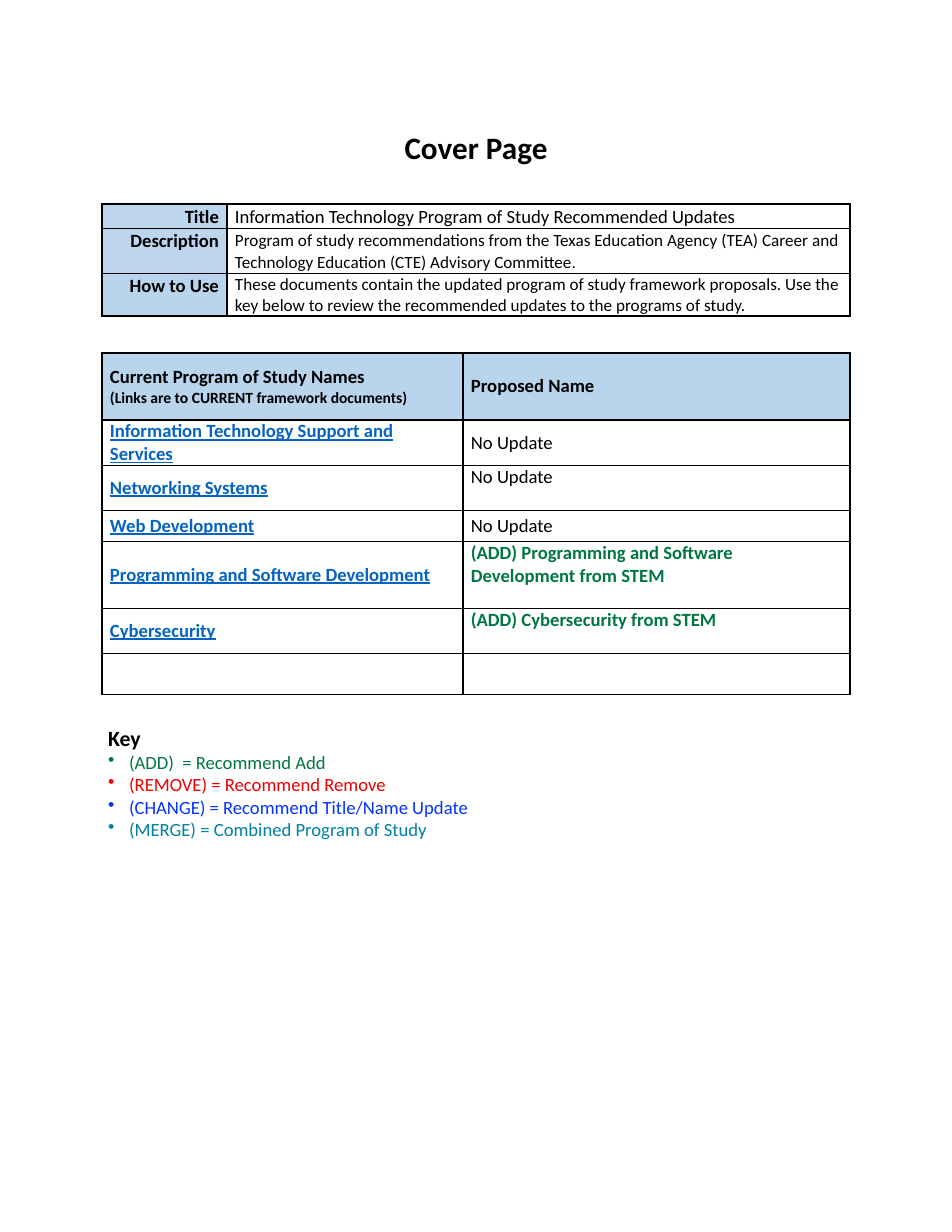
from lxml import etree
from pptx import Presentation
from pptx import util as u
from pptx.dml.color import RGBColor
from pptx.enum import text
from pptx.oxml import ns

PX = u.Inches(1) / 112
FONT = "Calibri"
COLORS = {
    "black": "000000", "white": "FFFFFF", "label": "BDD6EE", "header": "B9D4ED",
    "link": "0563C1", "add": "007742", "remove": "ED0000", "change": "0432FF",
    "merge": "0080A3",
}
TOP, MIDDLE = text.MSO_ANCHOR.TOP, text.MSO_ANCHOR.MIDDLE
RIGHT = text.PP_ALIGN.RIGHT

DETAILS = [
    ("Title", "Information Technology Program of Study Recommended Updates",
     12, 1.07, "label", 24),
    ("Description", "Program of study recommendations from the Texas Education Agency "
     "(TEA) Career and Technology Education (CTE) Advisory Committee.",
     11, 1.07, "label", 44),
    ("How to Use", "These documents contain the updated program of study framework "
     "proposals. Use the key below to review the recommended updates to the "
     "programs of study.", 11, 1, "header", 42),
]
PROGRAMS = [
    ("Information Technology Support and Services", "No Update", MIDDLE, 45),
    ("Networking Systems", "No Update", TOP, 45),
    ("Web Development", "No Update", MIDDLE, 31),
    ("Programming and Software Development",
     "(ADD) Programming and Software Development from STEM", TOP, 67),
    ("Cybersecurity", "(ADD) Cybersecurity from STEM", TOP, 45),
    ("", "", MIDDLE, 41),
]
KEY = [
    ("(ADD)  = Recommend Add", "add"),
    ("(REMOVE) = Recommend Remove", "remove"),
    ("(CHANGE) = Recommend Title/Name Update", "change"),
    ("(MERGE) = Combined Program of Study", "merge"),
]


def px(n):
    return u.Emu(round(n * PX))


def rgb(name):
    return RGBColor.from_string(COLORS[name])


def write(p, words, size=12, bold=False, color="black", underline=False):
    p.text = words
    f = p.font
    f.name, f.size, f.bold, f.underline = FONT, u.Pt(size), bold, underline
    f.color.rgb = rgb(color)


def add_border(cell):
    tc_pr = cell._tc.get_or_add_tcPr()
    for side in ("a:lnL", "a:lnR", "a:lnT", "a:lnB"):
        ln = etree.SubElement(tc_pr, ns.qn(side), w=str(u.Pt(1)))
        fill = etree.SubElement(ln, ns.qn("a:solidFill"))
        etree.SubElement(fill, ns.qn("a:srgbClr"), val=COLORS["black"])


def format_cell(cell, fill="white", anchor=TOP):
    add_border(cell)
    cell.fill.solid()
    cell.fill.fore_color.rgb = rgb(fill)
    cell.vertical_anchor = anchor
    cell.margin_left = cell.margin_right = px(8)
    cell.margin_top = cell.margin_bottom = 0
    return cell.text_frame.paragraphs[0]


def add_table(s, top, widths, heights, header=False):
    frame = s.shapes.add_table(len(heights), len(widths), px(102), px(top),
                               px(sum(widths)), px(sum(heights)))
    table = frame.table
    table.first_row, table.horz_banding = header, False
    for column, width in zip(table.columns, widths):
        column.width = px(width)
    for row, height in zip(table.rows, heights):
        row.height = px(height)
    return table


def add_title(s):
    sp = s.shapes.title
    sp.left, sp.top, sp.width, sp.height = px(0), px(119), px(952), px(56)
    tf = sp.text_frame
    tf.vertical_anchor = MIDDLE
    p = tf.paragraphs[0]
    write(p, "Cover Page", 20, True)
    p.alignment = text.PP_ALIGN.CENTER


def add_details(s):
    table = add_table(s, 204, [125, 623], [row[-1] for row in DETAILS])
    for i, (label, words, size, spacing, fill, _) in enumerate(DETAILS):
        p = format_cell(table.cell(i, 0), fill)
        write(p, label, bold=True)
        p.alignment, p.line_spacing = RIGHT, 1.07
        p = format_cell(table.cell(i, 1))
        write(p, words, size)
        p.line_spacing = spacing


def add_programs(s):
    heights = [67] + [row[-1] for row in PROGRAMS]
    table = add_table(s, 353, [361, 387], heights, header=True)
    current, proposed = table.cell(0, 0), table.cell(0, 1)
    write(format_cell(current, "header", MIDDLE),
          "Current Program of Study Names", bold=True)
    write(current.text_frame.add_paragraph(),
          "(Links are to CURRENT framework documents)", 10, True)
    write(format_cell(proposed, "header", MIDDLE), "Proposed Name", bold=True)
    for i, (name, update, anchor, _) in enumerate(PROGRAMS, 1):
        write(format_cell(table.cell(i, 0), anchor=MIDDLE), name,
              bold=True, color="link", underline=True)
        added = update.startswith("(ADD)")
        write(format_cell(table.cell(i, 1), anchor=anchor), update,
              bold=added, color="add" if added else "black")


def add_bullet(p):
    p_pr = p._p.get_or_add_pPr()
    p_pr.set("marL", str(px(21)))
    p_pr.set("indent", str(-px(21)))
    bullet = etree.Element(ns.qn("a:buChar"), char="•")
    p_pr.insert_element_before(bullet, "a:tabLst", "a:defRPr", "a:extLst")


def add_key(s):
    tf = s.shapes.add_textbox(px(97), px(719), px(638), px(128)).text_frame
    tf.word_wrap = True
    write(tf.paragraphs[0], "Key", 14, True)
    for words, color in KEY:
        p = tf.add_paragraph()
        write(p, words, color=color)
        add_bullet(p)


def main():
    prs = Presentation()
    prs.slide_width, prs.slide_height = px(952), px(1232)
    s = prs.slides.add_slide(prs.slide_layouts[5])
    add_title(s)
    add_details(s)
    add_programs(s)
    add_key(s)
    prs.save("out.pptx")


if __name__ == "__main__":
    main()
